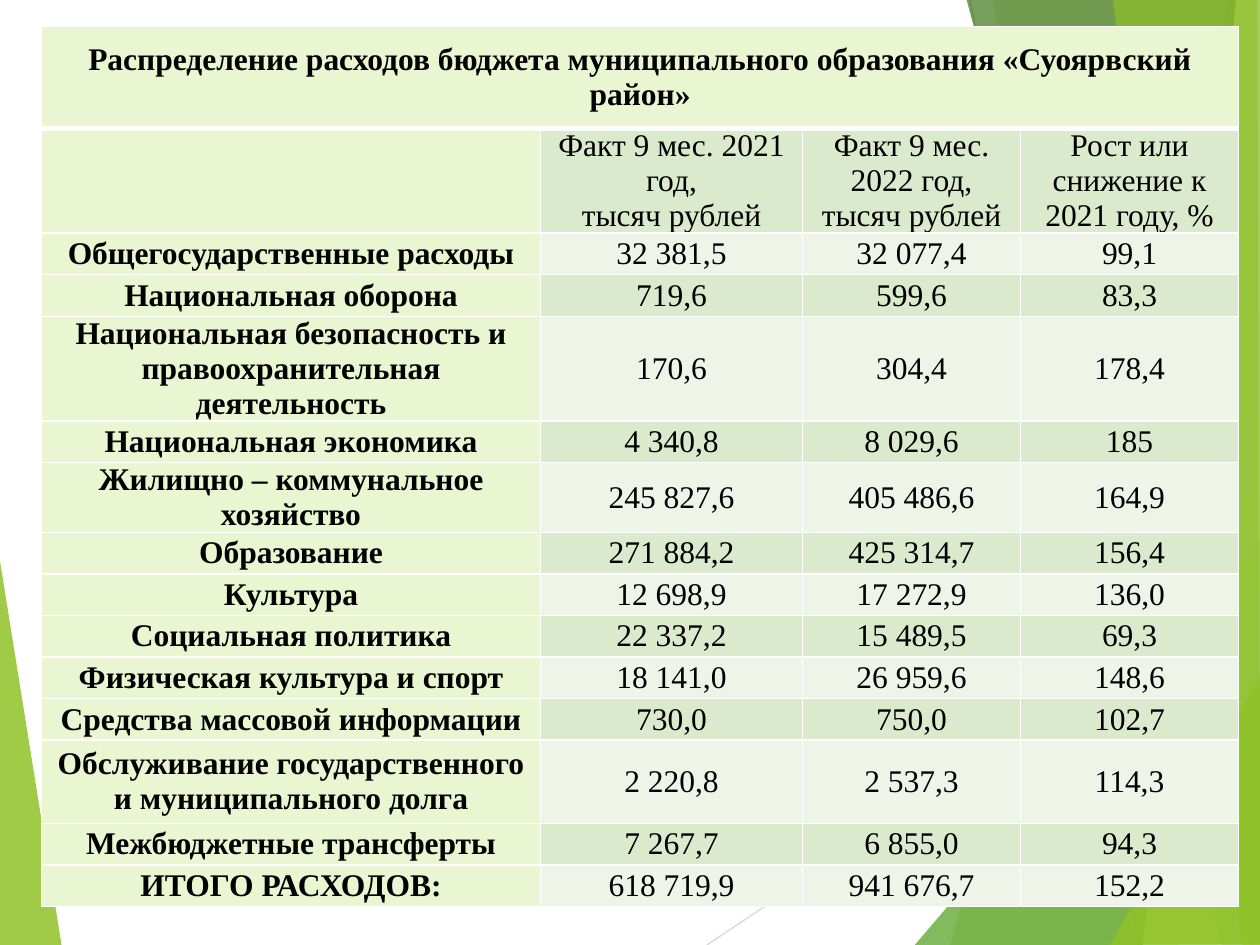
import pptx
import pptx.dml.color
import pptx.enum.shapes
import pptx.enum.text
import pptx.oxml
import pptx.oxml.ns
import pptx.util

WIDTH = pptx.util.Inches(10)
HEIGHT = pptx.util.Inches(7.5)
FONT = "Times New Roman"
LABEL_FILL = "EAF6D1"
BAND_FILLS = ("EEF4E8", "DBE9CD")
COLUMN_SHARES = (39.6, 20.8, 17.3, 17.3)
TITLE_ROW_SHARE = 10.8
LINE_SHARE = 4.4

TITLE = "Распределение расходов бюджета муниципального образования «Суоярвский район»"
ROWS = [
    (2, "", "Факт 9 мес. 2021 год,\nтысяч рублей", "Факт 9 мес. 2022 год,\nтысяч рублей",
     "Рост или снижение к 2021 году, %"),
    (1, "Общегосударственные расходы", "32 381,5", "32 077,4", "99,1"),
    (1, "Национальная оборона", "719,6", "599,6", "83,3"),
    (2, "Национальная безопасность и правоохранительная деятельность",
     "170,6", "304,4", "178,4"),
    (1, "Национальная экономика", "4 340,8", "8 029,6", "185"),
    (1, "Жилищно – коммунальное хозяйство", "245 827,6", "405 486,6", "164,9"),
    (1, "Образование", "271 884,2", "425 314,7", "156,4"),
    (1, "Культура", "12 698,9", "17 272,9", "136,0"),
    (1, "Социальная политика", "22 337,2", "15 489,5", "69,3"),
    (1, "Физическая культура и спорт", "18 141,0", "26 959,6", "148,6"),
    (1, "Средства массовой информации", "730,0", "750,0", "102,7"),
    (2, "Обслуживание государственного и муниципального долга",
     "2 220,8", "2 537,3", "114,3"),
    (1, "Межбюджетные трансферты", "7 267,7", "6 855,0", "94,3"),
    (1, "ИТОГО РАСХОДОВ:", "618 719,9", "941 676,7", "152,2"),
]

LEFT_FACET = ("90C226", 85, [(-0.1, 58.53), (4.9, 100.1), (-0.1, 100)])
RAYS = [
    ("D9D9D9", (56.1, 100), (100.1, 60.93)),
    ("BFBFBF", (77, 0), (90.4, 100)),
]
RIGHT_FACETS = [
    ("90C226", 30, [(97.5, 0), (75.4, 100), (100.2, 100.1), (100.1, 0.1)]),
    ("90C226", 20, [(78.8, -0.1), (91.9, 100), (100.1, 100), (100.1, -0.1)]),
    ("54A021", 72, [(72.6, 100), (100, 57.2), (100.1, 100)]),
    ("3F7819", 70, [(76.7, -0.1), (97, 100), (100.1, 99.9), (100.1, -0.1)]),
    ("C0E474", 70, [(98.1, -0.1), (90.7, 100), (100.1, 100), (100, -0.1)]),
    ("90C226", 65, [(88.3, -0.1), (98.6, 100), (100, 100), (99.8, -0.1)]),
    ("90C226", 80, [(88.1, 100), (100.1, 71.33), (100.1, 99.9)]),
]


def across(share):
    return round(WIDTH * share / 100)


def down(share):
    return round(HEIGHT * share / 100)


def color(value):
    return pptx.dml.color.RGBColor.from_string(value)


def add_child(parent, tag, **attributes):
    child = pptx.oxml.parse_xml(f"<{tag} {pptx.oxml.ns.nsdecls('a')}/>")
    for name, value in attributes.items():
        child.set(name, str(value))
    parent.append(child)
    return child


def add_facet(page, fill, opacity, corners):
    points = [(across(x), down(y)) for x, y in corners]
    builder = page.shapes.build_freeform(*points[0])
    builder.add_line_segments(points[1:], close=True)
    facet = builder.convert_to_shape()
    facet.shadow.inherit = False
    facet.line.fill.background()
    facet.fill.solid()
    facet.fill.fore_color.rgb = color(fill)
    tint = facet._element.spPr.find(".//" + pptx.oxml.ns.qn("a:srgbClr"))
    add_child(tint, "a:alpha", val=opacity * 1000)


def add_ray(page, stroke, start, end):
    ray = page.shapes.add_connector(
        pptx.enum.shapes.MSO_CONNECTOR.STRAIGHT,
        across(start[0]), down(start[1]), across(end[0]), down(end[1]))
    ray.line.color.rgb = color(stroke)
    ray.line.width = pptx.util.Pt(0.75)
    add_child(ray._element.spPr, "a:effectLst")


def set_borders(cell, top=1, bottom=1):
    properties = cell._tc.get_or_add_tcPr()
    widths = {"lnL": 1, "lnR": 1, "lnT": top, "lnB": bottom}
    for index, (side, width) in enumerate(widths.items()):
        border = add_child(properties, f"a:{side}", w=pptx.util.Pt(width))
        add_child(add_child(border, "a:solidFill"), "a:srgbClr", val="FFFFFF")
        properties.insert(index, border)


def style_cell(cell, text, fill, bold):
    cell.fill.solid()
    cell.fill.fore_color.rgb = color(fill)
    cell.margin_left = cell.margin_right = pptx.util.Inches(0.07)
    cell.margin_top = cell.margin_bottom = 0
    cell.vertical_anchor = pptx.enum.text.MSO_ANCHOR.MIDDLE
    cell.text_frame.text = text
    for para in cell.text_frame.paragraphs:
        para.alignment = pptx.enum.text.PP_ALIGN.CENTER
        para.font.size = pptx.util.Pt(18)
        for span in para.runs:
            span.font.name = FONT
            span.font.size = pptx.util.Pt(18)
            span.font.bold = bold
            span.font.color.rgb = color("000000")


def add_budget_table(page):
    heights = [TITLE_ROW_SHARE] + [lines * LINE_SHARE for lines, *_ in ROWS]
    frame = page.shapes.add_table(
        len(heights), len(COLUMN_SHARES), across(3.3), down(2.8),
        across(sum(COLUMN_SHARES)), down(sum(heights)))
    table = frame.table
    table.first_row = table.horz_banding = False
    for column, share in zip(table.columns, COLUMN_SHARES):
        column.width = across(share)
    for row, share in zip(table.rows, heights):
        row.height = down(share)

    table.cell(0, 0).merge(table.cell(0, len(COLUMN_SHARES) - 1))
    style_cell(table.cell(0, 0), TITLE, LABEL_FILL, True)
    for cell in table.rows[0].cells:
        set_borders(cell, bottom=3)
    for row_index, (_, *texts) in enumerate(ROWS, start=1):
        for column_index, text in enumerate(texts):
            cell = table.cell(row_index, column_index)
            is_label = column_index == 0
            fill = LABEL_FILL if is_label else BAND_FILLS[row_index % 2]
            style_cell(cell, text, fill, is_label)
            set_borders(cell, top=3 if row_index == 1 else 1)
    table.cell(1, 3).vertical_anchor = pptx.enum.text.MSO_ANCHOR.TOP


def main():
    deck = pptx.Presentation()
    deck.slide_width, deck.slide_height = WIDTH, HEIGHT
    page = deck.slides.add_slide(deck.slide_layouts[6])
    add_facet(page, *LEFT_FACET)
    for ray in RAYS:
        add_ray(page, *ray)
    for facet in RIGHT_FACETS:
        add_facet(page, *facet)
    add_budget_table(page)
    deck.save("out.pptx")


if __name__ == "__main__":
    main()
